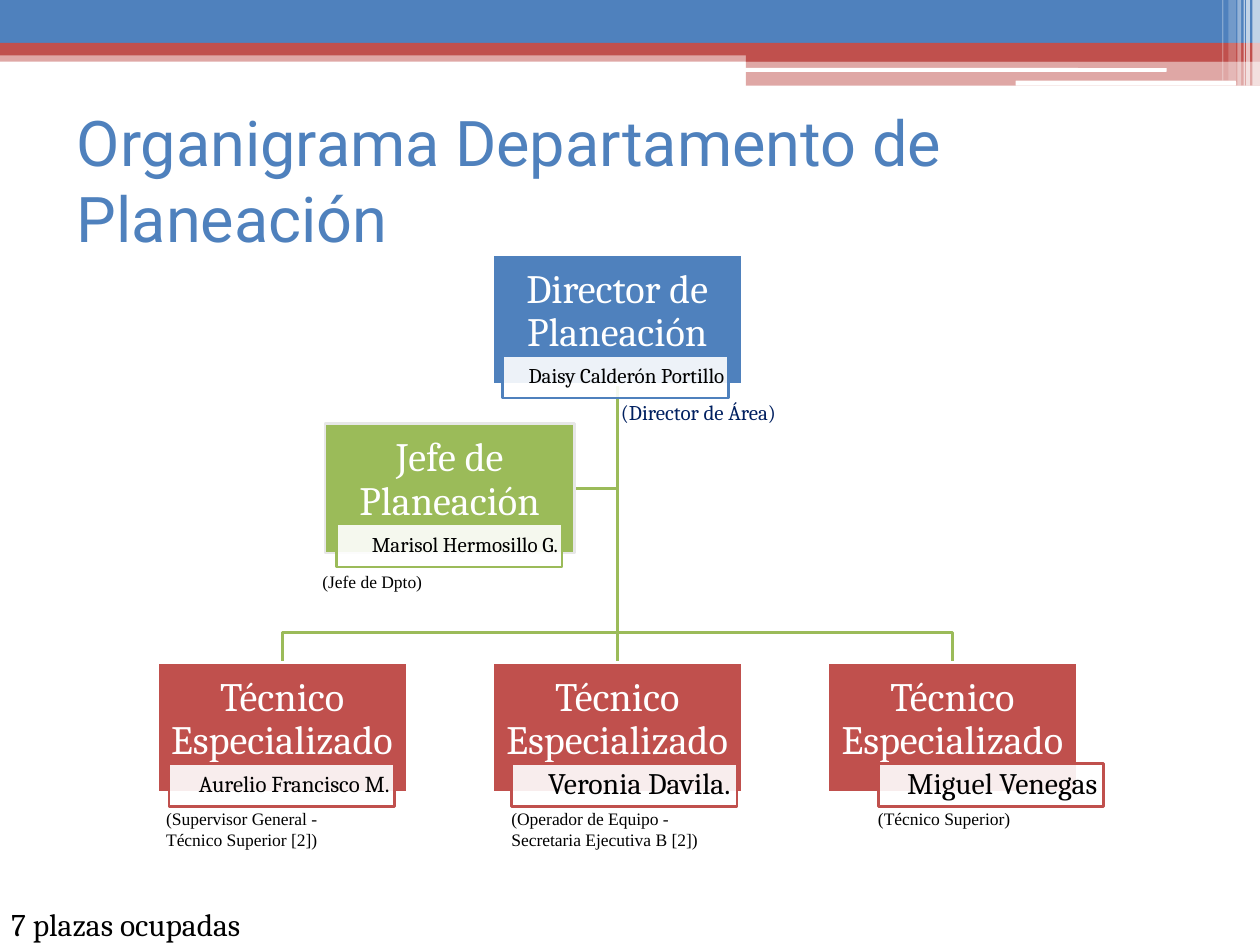
from lxml import etree
from pptx import Presentation
from pptx.dml.color import RGBColor
from pptx.enum.shapes import MSO_CONNECTOR, MSO_SHAPE
from pptx.enum.text import MSO_ANCHOR, MSO_AUTO_SIZE, PP_ALIGN
from pptx.oxml.ns import qn
from pptx.util import Inches, Pt

RECT, ROUND = MSO_SHAPE.RECTANGLE, MSO_SHAPE.ROUNDED_RECTANGLE
STRAIGHT = MSO_CONNECTOR.STRAIGHT
MIDDLE, TOP = MSO_ANCHOR.MIDDLE, MSO_ANCHOR.TOP
LEFT, CENTER, RIGHT = PP_ALIGN.LEFT, PP_ALIGN.CENTER, PP_ALIGN.RIGHT
GROW = MSO_AUTO_SIZE.SHAPE_TO_FIT_TEXT

BLUE = RGBColor(0x4F, 0x81, 0xBD)
RED = RGBColor(0xC0, 0x50, 0x4D)
GREEN = RGBColor(0x9B, 0xBB, 0x59)
NAVY = RGBColor(0x00, 0x20, 0x60)
GRAY = RGBColor(0xE7, 0xE7, 0xE7)
WHITE = RGBColor(0xFF, 0xFF, 0xFF)
BLACK = RGBColor(0, 0, 0)

SERIF, TITLE_FONT, NOTE_FONT = "Cambria", "Roboto", "Times New Roman"
LINE = 1.5

TITLE = "Organigrama Departamento de Planeación"

# shape, left, top, width, height, colour, opacity %
BANNER = [
    (RECT, 0, 0.4, 10, 0.09, RED, 50),
    (RECT, 0, 0, 10, 0.34, BLUE, 100),
    (RECT, 0, 0.34, 10, 0.1, RED, 100),
    (RECT, 5.92, 0.39, 4.08, 0.1, RED, 100),
    (RECT, 5.92, 0.48, 4.08, 0.2, RED, 50),
    (ROUND, 5.91, 0.54, 3.35, 0.03, WHITE, 100),
    (ROUND, 8.06, 0.64, 1.75, 0.04, WHITE, 100),
    (RECT, 9.94, 0, 0.06, 0.68, WHITE, 65),
    (RECT, 9.89, 0, 0.03, 0.68, WHITE, 65),
    (RECT, 9.87, 0, 0.01, 0.68, WHITE, 60),
    (RECT, 9.82, 0, 0.03, 0.68, WHITE, 40),
    (RECT, 9.75, 0, 0.06, 0.64, WHITE, 20),
    (RECT, 9.7, 0, 0.01, 0.64, WHITE, 30),
]

# Chart grid: three columns of boxes, the assistant half a column to the left
BOX_W, BOX_H = 1.98, 1.03
NAME_W, NAME_H, NAME_DROP = 1.79, 0.34, 0.8
PITCH = 2.66
COLUMNS = [1.25 + PITCH * i for i in range(3)]
DIRECTOR_TOP, CHIEF_TOP, STAFF_TOP = 2.02, 3.36, 5.26
BRANCH_Y = 5.02
TRUNK_X = COLUMNS[1] + BOX_W / 2
CHIEF_LEFT = COLUMNS[1] - PITCH / 2

# key, role, left, top, colour, outline, name, name left, name size, name inset
POSTS = [
    ("director", "Director de Planeación", COLUMNS[1], DIRECTOR_TOP, BLUE, WHITE,
     "Daisy Calderón Portillo", 3.99, 12, 0.03),
    ("left", "Técnico Especializado", COLUMNS[0], STAFF_TOP, RED, WHITE,
     "Aurelio Francisco M.", 1.34, 13, 0.04),
    ("middle", "Técnico Especializado", COLUMNS[1], STAFF_TOP, RED, WHITE,
     "Veronia Davila.", 4.06, 17, 0.05),
    ("right", "Técnico Especializado", COLUMNS[2], STAFF_TOP, RED, WHITE,
     "Miguel Venegas", 6.97, 17, 0.05),
    ("chief", "Jefe de Planeación", CHIEF_LEFT, CHIEF_TOP, GREEN, GRAY,
     "Marisol Hermosillo G.", 2.67, 12, 0.03),
]

# text, left, top, width, height, font, size, colour, wrap
NOTES = [
    ("(Supervisor General -\nTécnico Superior [2])", 1.22, 6.36, 1.42, 0.44,
     NOTE_FONT, 10, BLACK, False),
    ("(Jefe de Dpto)", 2.46, 4.48, 1.8, 0.27, NOTE_FONT, 10, BLACK, True),
    ("(Operador de Equipo -\nSecretaria Ejecutiva B [2])", 3.96, 6.36, 1.71, 0.44,
     NOTE_FONT, 10, BLACK, False),
    ("7 plazas ocupadas", -0.01, 7.13, 2.2, 0.4, SERIF, 18, BLACK, False),
    ("(Director de Área)", 4.83, 3.12, 1.55, 0.3, SERIF, 12, NAVY, False),
    ("(Técnico Superior)", 6.87, 6.36, 1.27, 0.27, NOTE_FONT, 10, BLACK, False),
]


def add_block(page, kind, left, top, width, height, color, opacity=100, outline=None):
    block = page.shapes.add_shape(kind, *map(Inches, (left, top, width, height)))
    block.shadow.inherit = False
    block.fill.solid()
    block.fill.fore_color.rgb = color
    if opacity < 100:
        solid = block.element.spPr.find(qn("a:solidFill"))
        etree.SubElement(solid[0], qn("a:alpha"), val=str(opacity * 1000))
    if outline is None:
        block.line.fill.background()
    else:
        block.line.color.rgb = outline
        block.line.width = Pt(LINE)
    return block


def write(frame, text, font, size, color, align=LEFT, anchor=TOP, spacing=None):
    frame.text = text
    frame.vertical_anchor = anchor
    for para in frame.paragraphs:
        para.alignment = align
        if spacing:
            para.line_spacing = spacing
        for span in para.runs:
            span.font.name = font
            span.font.size = Pt(size)
            span.font.color.rgb = color


def set_insets(frame, left, top, right, bottom):
    frame.word_wrap = True
    frame.margin_left, frame.margin_top = Inches(left), Inches(top)
    frame.margin_right, frame.margin_bottom = Inches(right), Inches(bottom)


def add_bent_line(page, points):
    start, *rest = [(Inches(x), Inches(y)) for x, y in points]
    builder = page.shapes.build_freeform(*start)
    builder.add_line_segments(rest, close=False)
    bent = builder.convert_to_shape()
    bent.shadow.inherit = False
    bent.fill.background()
    bent.line.color.rgb = GREEN
    bent.line.width = Pt(LINE)


def add_trunk(page):
    trunk = page.shapes.add_connector(
        STRAIGHT, Inches(TRUNK_X), Inches(DIRECTOR_TOP + BOX_H),
        Inches(TRUNK_X), Inches(STAFF_TOP))
    trunk.line.color.rgb = GREEN
    trunk.line.width = Pt(LINE)
    etree.SubElement(trunk.element.spPr, qn("a:effectLst"))
    return trunk


def add_post(page, role, left, top, color, outline, name, name_left, size, inset):
    box = add_block(page, RECT, left, top, BOX_W, BOX_H, color, outline=outline)
    set_insets(box.text_frame, 0.02, 0.02, 0.02, 0.14)
    write(box.text_frame, role, SERIF, 23, WHITE, CENTER, MIDDLE, 0.9)
    label = add_block(page, RECT, name_left, top + NAME_DROP, NAME_W, NAME_H,
                      WHITE, 90, color)
    set_insets(label.text_frame, inset, 0.01, inset, 0.01)
    write(label.text_frame, name, SERIF, size, BLACK, RIGHT, MIDDLE, 0.9)
    return box


def main():
    deck = Presentation()
    deck.slide_width, deck.slide_height = Inches(10), Inches(7.5)
    page = deck.slides.add_slide(deck.slide_layouts[5])

    for part in BANNER:
        add_block(page, *part)

    start = (TRUNK_X, DIRECTOR_TOP + BOX_H)
    chief_y = CHIEF_TOP + BOX_H / 2
    add_bent_line(page, [start, (TRUNK_X, chief_y), (CHIEF_LEFT + BOX_W, chief_y)])
    for column in (COLUMNS[2], COLUMNS[0]):
        center = column + BOX_W / 2
        add_bent_line(page, [start, (TRUNK_X, BRANCH_Y), (center, BRANCH_Y),
                             (center, STAFF_TOP)])
    trunk = add_trunk(page)

    boxes = {key: add_post(page, *post) for key, *post in POSTS}
    trunk.begin_connect(boxes["director"], 2)
    trunk.end_connect(boxes["middle"], 0)

    title = page.shapes.title
    title.left, title.top = Inches(0.51), Inches(0.84)
    title.width, title.height = Inches(9), Inches(1.17)
    write(title.text_frame, TITLE, TITLE_FONT, 36, BLUE, LEFT, MIDDLE)

    for text, left, top, width, height, font, size, color, wrap in NOTES:
        note = page.shapes.add_textbox(*map(Inches, (left, top, width, height)))
        note.text_frame.word_wrap = wrap
        note.text_frame.auto_size = GROW
        write(note.text_frame, text, font, size, color)

    deck.save("out.pptx")


if __name__ == "__main__":
    main()
